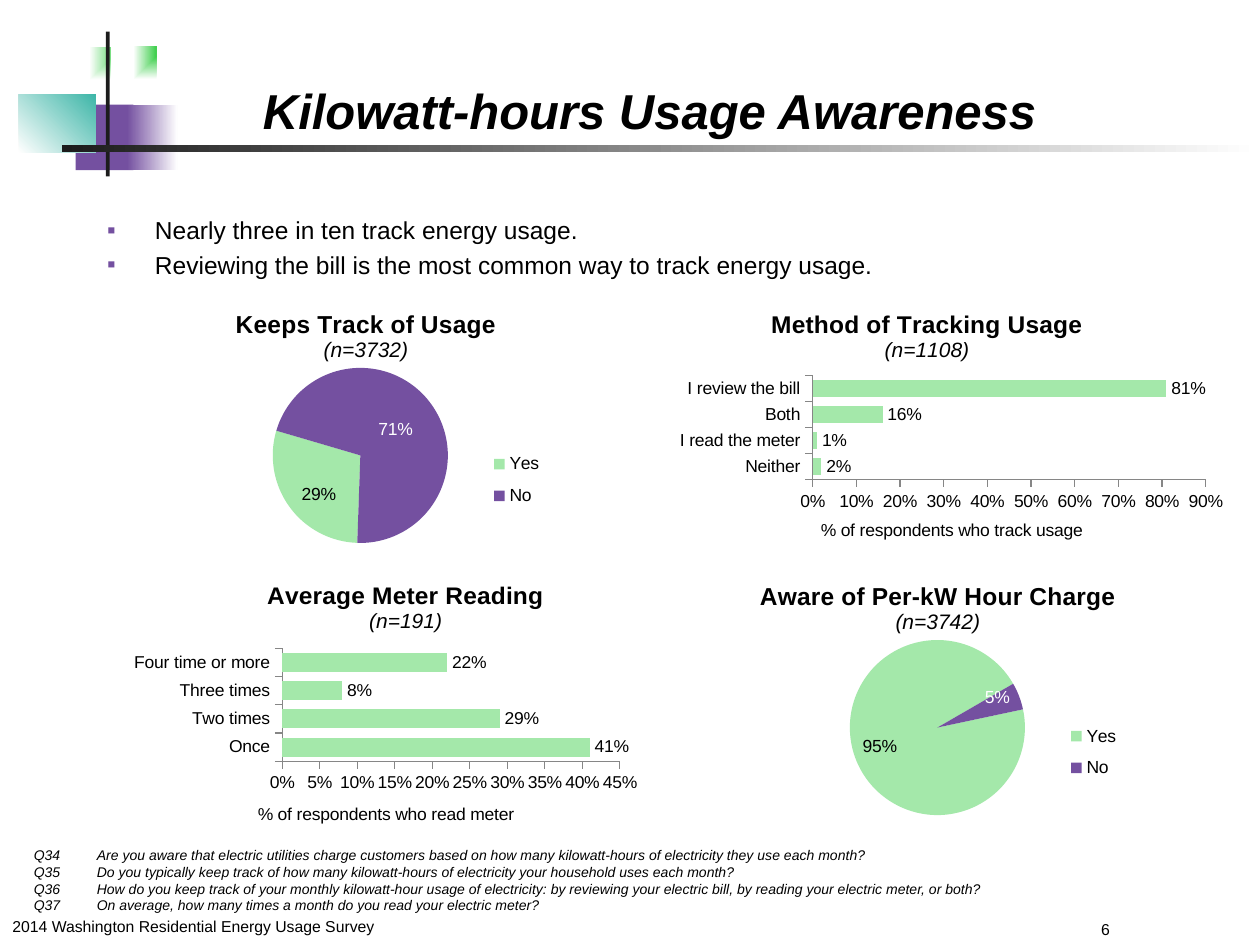
from pptx import Presentation
from pptx.chart.data import CategoryChartData
from pptx.dml.color import RGBColor
from pptx.enum import chart as charts, shapes, text
from pptx.oxml import parse_xml
from pptx.oxml.ns import nsdecls, qn
from pptx.util import Inches, Pt

COLORS = {"black": "000000", "white": "FFFFFF", "purple": "7450A0", "green": "3FCF4D",
          "teal": "3EB6A8", "ink": "1C1C1C", "mint": "A4E8AA", "axis": "868686"}
FONT = "Arial"


def color(name):
    return RGBColor.from_string(COLORS[name])


def style(font, size, bold=False, italic=False, name="black"):
    font.name, font.size, font.bold, font.italic = FONT, Pt(size), bold, italic
    font.color.rgb = color(name)


def inches(box):
    return [Inches(length) for length in box]


def place(shape, box):
    shape.left, shape.top, shape.width, shape.height = inches(box)


def write(text_frame, lines, size, **look):
    text_frame.word_wrap = True
    text_frame.auto_size = text.MSO_AUTO_SIZE.NONE
    text_frame.text = "\n".join(lines)
    for paragraph in text_frame.paragraphs:
        for run in paragraph.runs:
            style(run.font, size, **look)


# Text regions
def add_title(slide, box, wording):
    title = slide.shapes.title
    place(title, box)
    write(title.text_frame, [wording], 28, bold=True, italic=True)
    title.text_frame.vertical_anchor = text.MSO_ANCHOR.BOTTOM
    title.text_frame.paragraphs[0].alignment = text.PP_ALIGN.CENTER


def add_bullets(slide, box, lines):
    body = slide.placeholders[1]
    place(body, box)
    write(body.text_frame, lines, 14)
    for index, paragraph in enumerate(body.text_frame.paragraphs):
        properties = paragraph._p.get_or_add_pPr()
        properties.set("marL", str(Inches(0.38)))
        properties.set("indent", str(-Inches(0.38)))
        for xml in (f'<a:buClr {nsdecls("a")}><a:srgbClr val="{COLORS["purple"]}"/></a:buClr>',
                    f'<a:buFont {nsdecls("a")} typeface="{FONT}"/>',
                    f'<a:buChar {nsdecls("a")} char="▪"/>'):
            properties.append(parse_xml(xml))
        paragraph.space_before = Pt(2.8 if index else 0)


def add_text(slide, box, lines, size, tab=None, **look):
    text_frame = slide.shapes.add_textbox(*inches(box)).text_frame
    write(text_frame, lines, size, **look)
    if tab:
        for paragraph in text_frame.paragraphs:
            paragraph._p.get_or_add_pPr().append(parse_xml(
                f'<a:tabLst {nsdecls("a")}><a:tab pos="{Inches(tab)}" algn="l"/></a:tabLst>'))


# Corner ornament: one colour is solid, two colours are a gradient
def add_block(slide, box, names, angle=None):
    block = slide.shapes.add_shape(shapes.MSO_SHAPE.RECTANGLE, *inches(box))
    block.shadow.inherit = False
    block.line.fill.background()
    if len(names) == 1:
        block.fill.solid()
        block.fill.fore_color.rgb = color(names[0])
        return
    block.fill.gradient()
    for stop, name in zip(block.fill.gradient_stops, names):
        stop.color.rgb = color(name)
    if angle is not None:
        block.fill.gradient_angle = angle
        return
    # Without an angle the gradient spreads from the top right corner
    linear = next(block.element.iter(qn("a:lin")))
    linear.getparent().replace(linear, parse_xml(
        f'<a:path {nsdecls("a")} path="rect"><a:fillToRect l="100000" b="100000"/></a:path>'))


def add_ornament(slide, left, top):
    for (x, y, width, height), names, angle in (
            ((0.32, 0.13, 0.48, 0.51), ("green", "white"), None),
            ((0.73, 0.12, 0.36, 0.52), ("green", "white"), None),
            ((0.45, 0.58, 0.46, 0.52), ("purple",), None),
            ((0.86, 0.58, 0.4, 0.52), ("purple", "white"), 0),
            ((0, 0.5, 0.61, 0.46), ("white", "teal"), 45),
            ((0.69, 0, 0.03, 1.15), ("ink",), None),
            ((0.34, 0.9, 9.51, 0.06), ("ink", "white"), 0)):
        add_block(slide, (left + x, top + y, width, height), names, angle)


# Charts: places inside a chart are in inches from the corner of its box
def make_layout(chart_box, place_box, inner=False, edge=True):
    values = [("layoutTarget", "inner")] if inner else []
    values += [("xMode", "edge"), ("yMode", "edge")] if edge else []
    values += [(tag, length / chart_box[2 + index % 2])
               for index, (tag, length) in enumerate(zip("xywh", place_box))]
    children = "".join(f'<c:{tag} val="{value}"/>' for tag, value in values)
    return parse_xml(f'<c:layout {nsdecls("c")}><c:manualLayout>{children}'
                     '</c:manualLayout></c:layout>')


def set_layout(parent, chart_box, place_box, inner=False):
    layout = make_layout(chart_box, place_box, inner)
    current = parent.find(qn("c:layout"))
    if current is None:
        parent.insert(0, layout)
    else:
        parent.replace(current, layout)


def add_chart(slide, kind, box, title, count, title_at, plot_box, categories, values, number_format):
    data = CategoryChartData(number_format=number_format)
    data.categories = categories
    data.add_series("Series 1", values)
    chart = slide.shapes.add_chart(kind, *inches(box), data).chart
    style(chart.font, 10)
    chart.has_title = True
    text_frame = chart.chart_title.text_frame
    text_frame.text = f"{title}\n(n={count})"
    heading, sample = text_frame.paragraphs
    style(heading.runs[0].font, 14, bold=True)
    style(sample.runs[0].font, 12, italic=True)
    set_layout(chart.chart_title._element, box, title_at)
    set_layout(next(chart.element.iter(qn("c:plotArea"))), box, plot_box, inner=True)
    return chart


def add_pie(slide, box, title, count, title_at, values, start, label_shifts, percent=False):
    chart = add_chart(slide, charts.XL_CHART_TYPE.PIE, box, title, count, title_at,
                      (1.14, 0.5, 1.6, 1.39), ("Yes", "No"), values,
                      "General" if percent else "0%")
    chart.has_legend = True
    chart.legend.position = charts.XL_LEGEND_POSITION.RIGHT
    chart.legend.include_in_layout = False
    style(chart.legend.font, 10)
    set_layout(next(chart.element.iter(qn("c:legend"))), box, (2.93, 1.09, 0.5, 0.6))
    plot = chart.plots[0]
    plot.vary_by_categories = True
    for index, (fill, ink) in enumerate((("mint", "black"), ("purple", "white"))):
        point = plot.series[0].points[index]
        point.format.fill.solid()
        point.format.fill.fore_color.rgb = color(fill)
        style(point.data_label.font, 10, name=ink)
        point.data_label.position = charts.XL_LABEL_POSITION.INSIDE_END
    for label, shift in zip(chart.element.iter(qn("c:dLbl")), label_shifts):
        label.insert(1, make_layout(box, shift, edge=False))
        if percent:
            label.find(qn("c:showVal")).set("val", "0")
            label.find(qn("c:showPercent")).set("val", "1")
    next(chart.element.iter(qn("c:pieChart"))).append(
        parse_xml(f'<c:firstSliceAng {nsdecls("c")} val="{start}"/>'))


def add_bars(slide, box, title, count, title_at, plot_box, categories, values,
             axis_title, axis_title_at, maximum, step):
    chart = add_chart(slide, charts.XL_CHART_TYPE.BAR_CLUSTERED, box, title, count, title_at,
                      plot_box, categories, values, "0%")
    chart.has_legend = False
    plot = chart.plots[0]
    plot.gap_width = 50
    plot.vary_by_categories = False
    fill = plot.series[0].format.fill
    fill.solid()
    fill.fore_color.rgb = color("mint")
    plot.has_data_labels = True
    labels = plot.data_labels
    labels.show_value = True
    labels.number_format, labels.number_format_is_linked = "0%", False
    labels.position = charts.XL_LABEL_POSITION.OUTSIDE_END
    style(labels.font, 10)
    value_axis = chart.value_axis
    for axis in (chart.category_axis, value_axis):
        axis.has_major_gridlines = False
        axis.major_tick_mark = charts.XL_TICK_MARK.OUTSIDE
        axis.format.line.color.rgb = color("axis")
        style(axis.tick_labels.font, 10)
    value_axis.minimum_scale, value_axis.maximum_scale, value_axis.major_unit = 0, maximum, step
    value_axis.tick_labels.number_format = "0%"
    value_axis.tick_labels.number_format_is_linked = False
    write_axis = value_axis.axis_title.text_frame
    write_axis.text = axis_title
    style(write_axis.paragraphs[0].runs[0].font, 10)
    set_layout(value_axis.axis_title._element, box, axis_title_at)


def main():
    presentation = Presentation()
    presentation.slide_width, presentation.slide_height = Inches(10), Inches(7.5)
    slide = presentation.slides.add_slide(presentation.slide_layouts[1])
    add_ornament(slide, 0.15, 0.25)
    add_title(slide, (0.56, -0.09, 9.19, 1.25), "Kilowatt-hours Usage Awareness")
    add_bullets(slide, (0.75, 1.66, 9.25, 1.5), [
        "Nearly three in ten track energy usage.",
        "Reviewing the bill is the most common way to track energy usage."])
    add_pie(slide, (5.5, 4.58, 4, 2.01), "Aware of Per-kW Hour Charge", 3742, (0.5, 0),
            (0.95, 0.05), 78, ((0, 0), (-0.02, -0.09)))
    add_bars(slide, (0.35, 4.58, 4.79, 2), "Average Meter Reading", 191, (1.74, 0),
             (1.89, 0.58, 2.68, 0.92),
             ("Once", "Two times", "Three times", "Four time or more"), (0.41, 0.29, 0.08, 0.22),
             "% of respondents who read meter", (1.67, 1.81), 0.45, 0.05)
    add_pie(slide, (0.92, 2.42, 4, 2.01), "Keeps Track of Usage", 3732, (0.92, 0),
            (29, 71), 182, ((0.05, 0.02), (-0.1, 0.09)), percent=True)
    add_bars(slide, (4.25, 2.25, 5.58, 2.08), "Method of Tracking Usage", 1108, (1.84, 0.18),
             (2.2, 0.74, 3.12, 0.84),
             ("Neither", "I read the meter", "Both", "I review the bill"), (0.02, 0.01, 0.16, 0.81),
             "% of respondents who track usage", (2.24, 1.87), 0.9, 0.1)
    # Survey questions and footer
    add_text(slide, (0.17, 6.67, 9.5, 0.77), [
        "Q34\tAre you aware that electric utilities charge customers based on how many kilowatt-hours of electricity they use each month?",
        "Q35\tDo you typically keep track of how many kilowatt-hours of electricity your household uses each month?",
        "Q36\tHow do you keep track of your monthly kilowatt-hour usage of electricity: by reviewing your electric bill, by reading your electric meter, or both?",
        "Q37\tOn average, how many times a month do you read your electric meter?"],
        8, tab=0.5, italic=True)
    add_text(slide, (0, 7.23, 3.25, 0.25), ["2014 Washington Residential Energy Usage Survey"], 9)
    add_text(slide, (8.64, 7.25, 1.36, 0.24), ["6"], 9)
    presentation.save("out.pptx")


if __name__ == "__main__":
    main()
